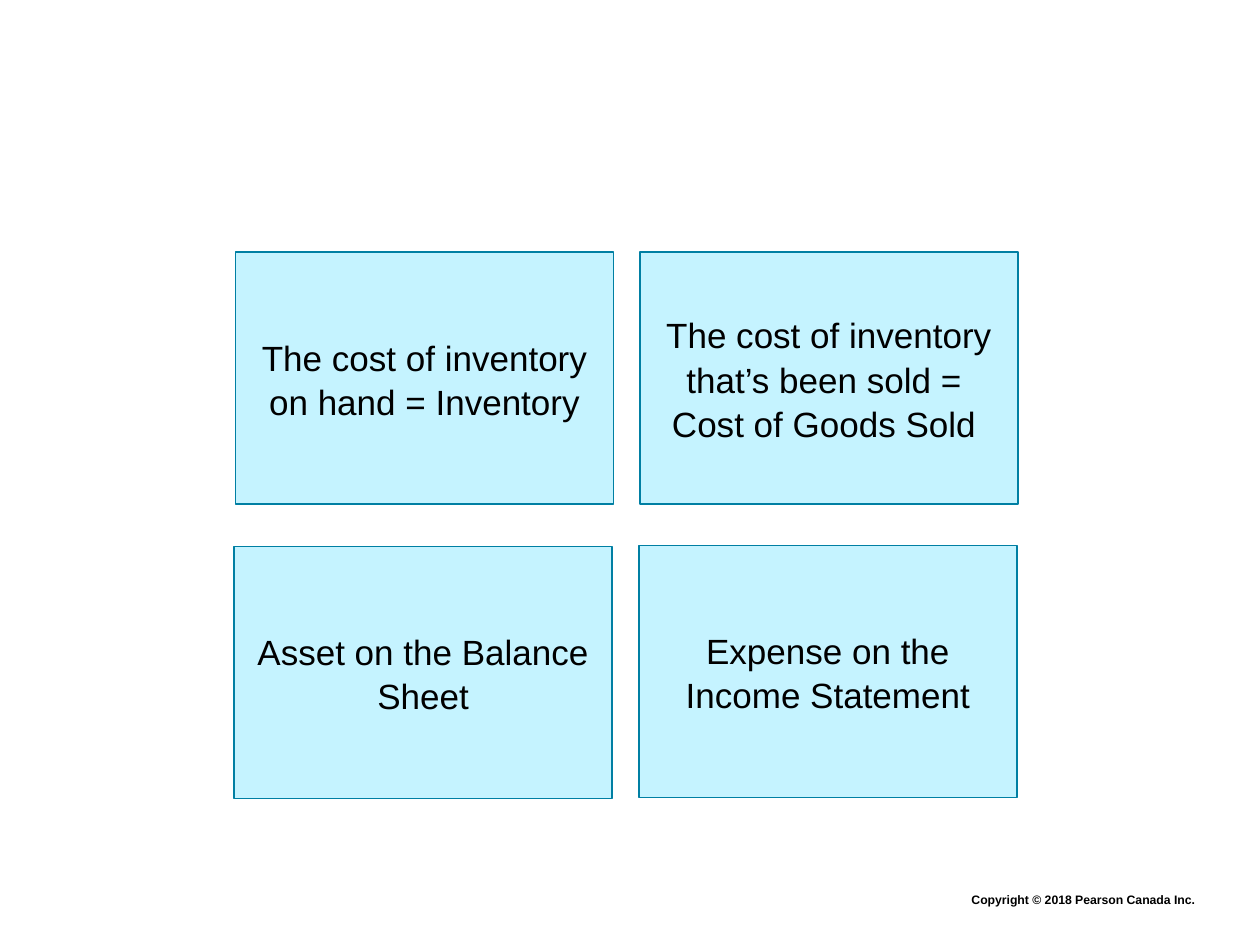
from lxml import etree
from pptx import Presentation
from pptx.dml.color import RGBColor
from pptx.enum import text
from pptx.oxml.ns import qn
from pptx.util import Cm, Pt

PALE_BLUE = RGBColor(0xC5, 0xF3, 0xFF)
TEAL = RGBColor(0x00, 0x7F, 0xA3)
BLACK = RGBColor(0, 0, 0)

CARD_WIDTH, CARD_HEIGHT = 7.62, 5.08
CARDS = [
    (4.75, 5.08, ["The cost of inventory on hand = Inventory"]),
    (12.9, 5.08, ["The cost of inventory that’s been sold = ", "Cost of Goods Sold "]),
    (4.72, 11.02, ["Asset on the Balance Sheet"]),
    (12.88, 11.0, ["Expense on the Income Statement"]),
]


def apply(target, formats):
    for name, value in formats.items():
        setattr(target, name, value)


def format_font(font, size, bold):
    apply(font, {"name": "Arial", "size": Pt(size), "bold": bold})
    font.color.rgb = BLACK


def remove_bullet(paragraph):
    properties = paragraph._p.get_or_add_pPr()
    properties.set("marL", "0")
    properties.set("indent", "0")
    etree.SubElement(properties, qn("a:buNone"))


def fill_card(card, left, top, lines):
    apply(card, {"left": Cm(left), "top": Cm(top),
                 "width": Cm(CARD_WIDTH), "height": Cm(CARD_HEIGHT)})
    card.fill.solid()
    card.fill.fore_color.rgb = PALE_BLUE
    card.line.color.rgb = TEAL
    card.line.width = Pt(0.75)
    frame = card.text_frame
    frame.text = "\n".join(lines)
    margins = {f"margin_{side}": Cm(0.25) for side in ("left", "top", "right", "bottom")}
    apply(frame, {"word_wrap": True, "auto_size": text.MSO_AUTO_SIZE.NONE,
                  "vertical_anchor": text.MSO_ANCHOR.MIDDLE, **margins})
    for paragraph in frame.paragraphs:
        remove_bullet(paragraph)
        apply(paragraph, {"alignment": text.PP_ALIGN.CENTER, "line_spacing": 1.05,
                          "space_before": Pt(0), "space_after": Pt(0)})
        format_font(paragraph.font, 20, False)


def add_copyright(slide, notice):
    frame = slide.shapes.add_textbox(Cm(4.45), Cm(17.86), Cm(19.89), Cm(0.56)).text_frame
    frame.word_wrap = True
    paragraph = frame.paragraphs[0]
    paragraph.text = notice
    paragraph.alignment = text.PP_ALIGN.RIGHT
    format_font(paragraph.font, 7, True)


def main():
    deck = Presentation()
    apply(deck, {"slide_width": Cm(25.4), "slide_height": Cm(19.05)})
    slide = deck.slides.add_slide(deck.slide_layouts.get_by_name("Comparison"))
    title, *cards = slide.placeholders
    title.element.getparent().remove(title.element)
    for card, (left, top, lines) in zip(cards, CARDS):
        fill_card(card, left, top, lines)
    add_copyright(slide, "Copyright © 2018 Pearson Canada Inc.")
    deck.save("out.pptx")


if __name__ == "__main__":
    main()
